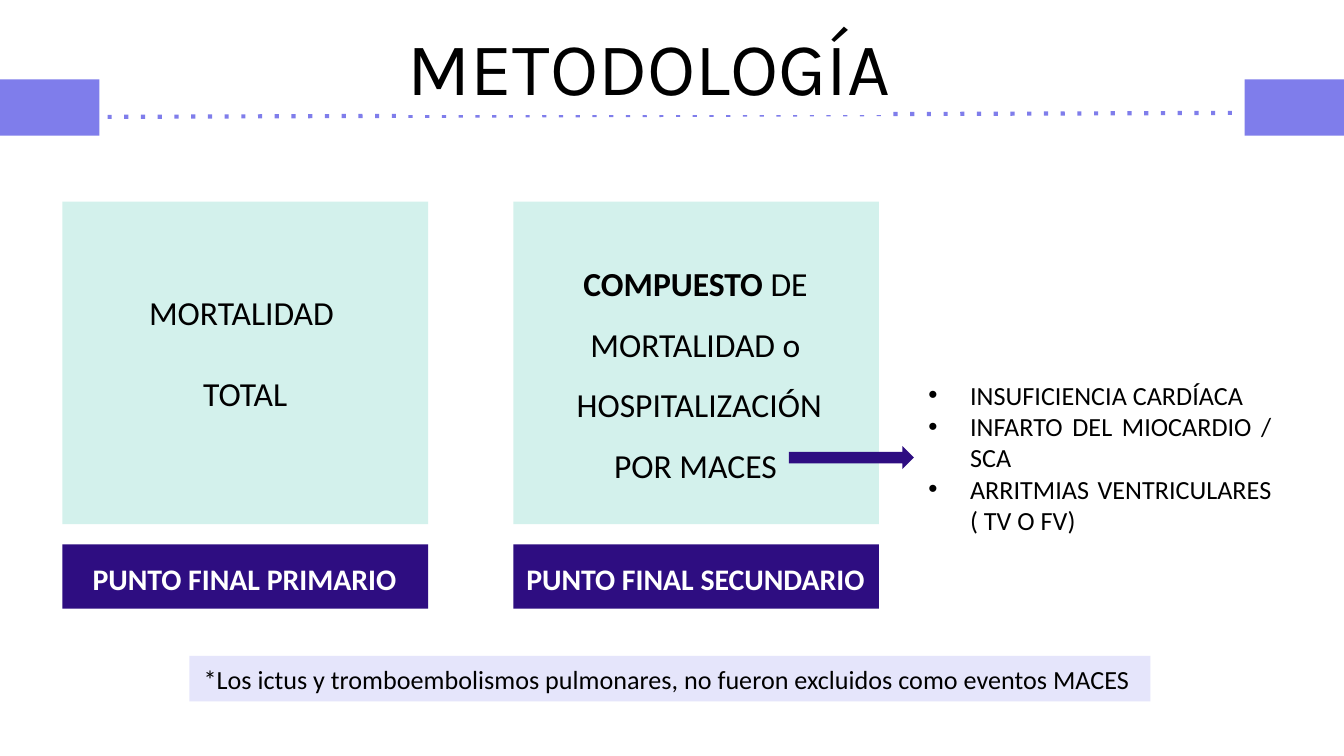
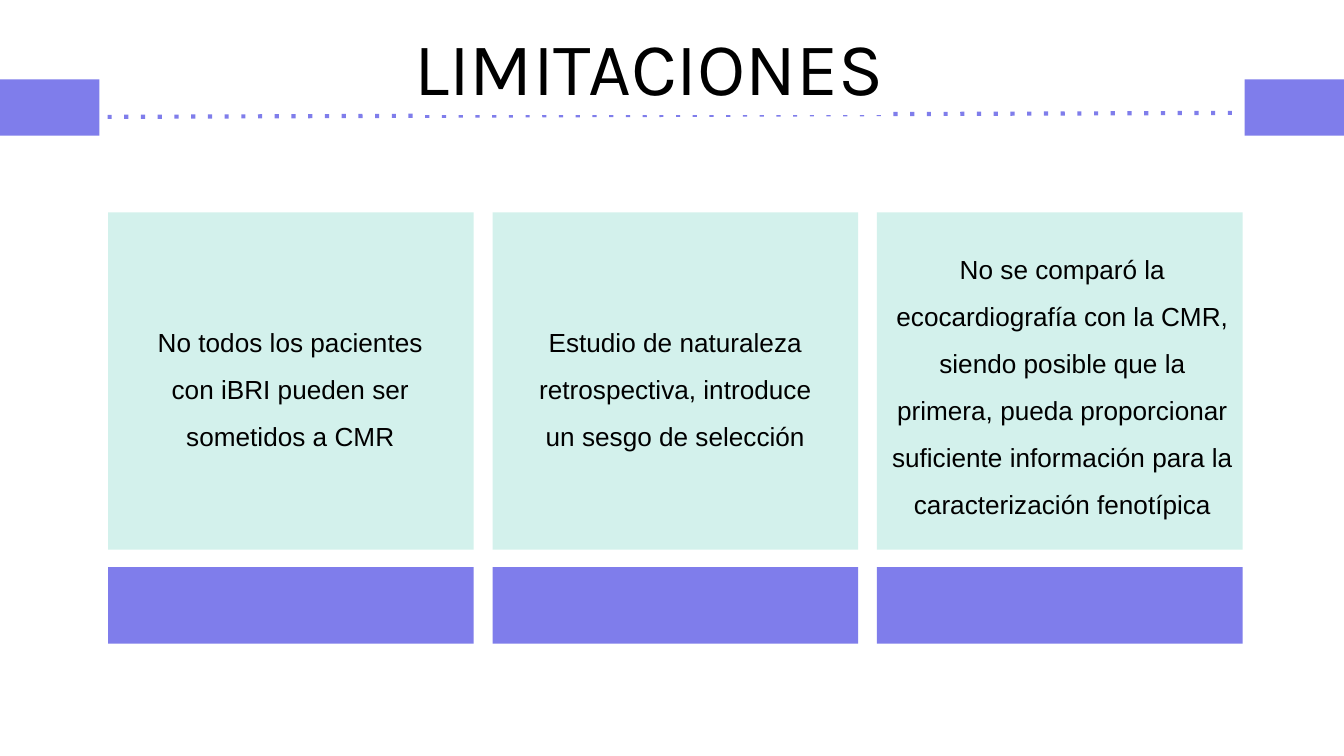
"""Builds the methodology and limitations slides of a cardiology study."""
import dataclasses
import typing

import lxml.etree
import pptx
import pptx.dml.color
import pptx.enum.shapes
import pptx.enum.text
import pptx.oxml.ns
import pptx.util

ALIGN = pptx.enum.text.PP_ALIGN
SHAPE = pptx.enum.shapes.MSO_SHAPE
COLUMNS, ROWS = 100, 56.25
WIDTH, HEIGHT = pptx.util.Inches(10), pptx.util.Inches(5.625)


@dataclasses.dataclass(frozen=True)
class Theme:
    """Colours, fonts and type sizes shared by the slides."""

    lavender: str = "7F7DEB"
    indigo: str = "2E0D81"
    mint: str = "89DBCC"
    mint_opacity: int = 37
    mist: str = "E5E5FB"
    black: str = "000000"
    white: str = "FFFFFF"
    title_font: str = "Karla"
    body_font: str = "Calibri"
    plain_font: str = "Arial"
    title_size: int = 40
    card_size: int = 18
    label_size: int = 16
    small_size: int = 14
    rule_width: float = 2.25


THEME = Theme()


class Box(typing.NamedTuple):
    """Place and size in grid columns and rows."""

    left: float
    top: float
    width: float
    height: float


class Run(typing.NamedTuple):
    """Words that share one weight."""

    text: str
    bold: bool = False


@dataclasses.dataclass(frozen=True)
class TextStyle:
    """Look of all paragraphs in one text."""

    size: int
    font: str = THEME.body_font
    color: str = THEME.black
    paragraph_format: dict = dataclasses.field(
        default_factory=lambda: {"alignment": ALIGN.CENTER})
    bulleted: bool = False
    highlight: str = ""


@dataclasses.dataclass(frozen=True)
class Label:
    """A free text box with its paragraphs of runs."""

    box: Box
    paragraphs: list[list[Run]]
    style: TextStyle
    wrap: bool = True


@dataclasses.dataclass(frozen=True)
class CardRow:
    """Equal cards side by side, each with a bar below."""

    count: int
    left: float
    pitch: float
    card_top: float
    card_height: float
    bar_top: float
    bar_height: float
    bar_color: str
    width: float = 27.2


AIRY = {"alignment": ALIGN.CENTER, "line_spacing": 1.5}
TITLE_STYLE = TextStyle(THEME.title_size, THEME.title_font, highlight=THEME.white)
BAR_STYLE = TextStyle(THEME.label_size, color=THEME.white)
CARD_STYLE = TextStyle(THEME.card_size, paragraph_format=AIRY)
SPLIT_STYLE = TextStyle(THEME.card_size, paragraph_format={
    "alignment": ALIGN.CENTER, "space_after": pptx.util.Pt(22)})
EVENT_STYLE = TextStyle(THEME.small_size, bulleted=True,
                        paragraph_format={"alignment": ALIGN.JUSTIFY})
NOTE_STYLE = TextStyle(THEME.small_size)
LIMIT_STYLE = TextStyle(THEME.small_size, THEME.plain_font, paragraph_format=AIRY)

TITLE_BOX = Box(28.6, 0.6, 39.4, 8.6)
SIDE_BANDS = [Box(left, 5.9, 7.5, 4.2) for left in (-0.1, 92.6)]
RULE_START, RULE_END = (8, 8.7), (92, 8.4)

ENDPOINT_CARDS = CardRow(2, 4.65, 33.55, 15, 24, 40.5, 4.8, THEME.indigo)
LIMIT_CARDS = CardRow(3, 8.05, 28.6, 15.8, 25.1, 42.2, 5.7, THEME.lavender)

ENDPOINT_LABELS = [
    Label(Box(5.7, 41.2, 25, 3.7), [[Run("PUNTO FINAL PRIMARIO", True)]],
          BAR_STYLE, wrap=False),
    Label(Box(37.9, 41.2, 27.7, 3.7), [[Run("PUNTO FINAL SECUNDARIO", True)]],
          BAR_STYLE, wrap=False),
    Label(Box(9.9, 21.2, 16.7, 10.1), [[Run("MORTALIDAD ")], [Run("TOTAL")]],
          SPLIT_STYLE, wrap=False),
    Label(Box(40.9, 17.6, 21.7, 19.2),
          [[Run("COMPUESTO", True), Run(" DE MORTALIDAD o")],
           [Run(" HOSPITALIZACIÓN POR MACES")]], CARD_STYLE),
    Label(Box(68.1, 27.7, 27.5, 12.8),
          [[Run("INSUFICIENCIA CARDÍACA")],
           [Run("INFARTO DEL MIOCARDIO / SCA")],
           [Run("ARRITMIAS VENTRICULARES ( TV O FV)")]], EVENT_STYLE),
]
EVENT_ARROW = Box(58.7, 33.2, 9.3, 1.7)
NOTE_BOX = Box(14.1, 48.8, 71.5, 3.4)
NOTE = [[Run("*Los ictus y tromboembolismos pulmonares, no fueron excluidos "
             "como eventos MACES ")]]

LIMIT_LABELS = [
    Label(Box(10.7, 22.6, 21.8, 11.6),
          [[Run("No todos los pacientes con iBRI pueden ser sometidos a CMR")]],
          LIMIT_STYLE),
    Label(Box(38.4, 22.6, 23.7, 11.6),
          [[Run("Estudio de naturaleza retrospectiva, introduce un sesgo de selección")]],
          LIMIT_STYLE),
    Label(Box(65.3, 17.2, 27.5, 22.2),
          [[Run("No se comparó la ecocardiografía con la CMR, siendo posible que la "
                "primera, pueda proporcionar")],
           [Run("suficiente información para la caracterización fenotípica")]],
          LIMIT_STYLE),
]


def across(columns: float) -> int:
    """Turn grid columns into a length."""
    return round(WIDTH * columns / COLUMNS)


def down(rows: float) -> int:
    """Turn grid rows into a length."""
    return round(HEIGHT * rows / ROWS)


def place(box: Box) -> tuple[int, int, int, int]:
    """Turn a grid box into slide lengths."""
    return across(box.left), down(box.top), across(box.width), down(box.height)


def rgb(color: str) -> pptx.dml.color.RGBColor:
    """Read a hexadecimal colour."""
    return pptx.dml.color.RGBColor.from_string(color)


def apply_format(target: typing.Any, values: dict) -> None:
    """Set each named attribute of the target."""
    for name, value in values.items():
        setattr(target, name, value)


def add_tag(parent: typing.Any, tag: str, **attributes: str) -> typing.Any:
    """Append a drawing element to its parent."""
    return lxml.etree.SubElement(parent, pptx.oxml.ns.qn(tag), attributes)


def add_bullet(paragraph: typing.Any) -> None:
    """Give the paragraph a hanging round bullet."""
    properties = paragraph._p.get_or_add_pPr()
    indent = pptx.util.Inches(0.31)
    properties.set("marL", str(indent))
    properties.set("indent", str(-indent))
    add_tag(add_tag(properties, "a:buClr"), "a:srgbClr", val=THEME.black)
    add_tag(properties, "a:buFont", typeface=THEME.plain_font)
    add_tag(properties, "a:buChar", char="•")


def write(frame: typing.Any, paragraphs: list[list[Run]], style: TextStyle) -> None:
    """Fill a text frame with styled paragraphs."""
    for index, runs in enumerate(paragraphs):
        paragraph = frame.add_paragraph() if index else frame.paragraphs[0]
        apply_format(paragraph, style.paragraph_format)
        if style.bulleted:
            add_bullet(paragraph)
        for words in runs:
            run = paragraph.add_run()
            run.text = words.text
            apply_format(run.font, {"size": pptx.util.Pt(style.size), "bold": words.bold})
            run.font.color.rgb = rgb(style.color)
            if style.highlight:
                add_tag(add_tag(run._r.get_or_add_rPr(), "a:highlight"),
                        "a:srgbClr", val=style.highlight)
            run.font.name = style.font


def add_block(slide: typing.Any, box: Box, color: str, opacity: int = 100,
              kind: typing.Any = SHAPE.RECTANGLE) -> typing.Any:
    """Draw a flat filled shape without outline."""
    shape = slide.shapes.add_shape(kind, *place(box))
    shape.shadow.inherit = False
    shape.fill.solid()
    shape.fill.fore_color.rgb = rgb(color)
    shape.line.fill.background()
    if opacity < 100:
        fill_color = shape._element.spPr.find(".//" + pptx.oxml.ns.qn("a:srgbClr"))
        add_tag(fill_color, "a:alpha", val=str(opacity * 1000))
    return shape


def add_label(slide: typing.Any, label: Label) -> typing.Any:
    """Draw a text box and return its frame."""
    frame = slide.shapes.add_textbox(*place(label.box)).text_frame
    frame.word_wrap = label.wrap
    write(frame, label.paragraphs, label.style)
    return frame


def add_rule(slide: typing.Any) -> None:
    """Draw the dotted line between the side bands."""
    (left, top), (right, bottom) = RULE_START, RULE_END
    connector = slide.shapes.add_connector(
        pptx.enum.shapes.MSO_CONNECTOR.STRAIGHT,
        across(left), down(top), across(right), down(bottom))
    connector.line.width = pptx.util.Pt(THEME.rule_width)
    connector.line.color.rgb = rgb(THEME.lavender)
    add_tag(connector.line._get_or_add_ln(), "a:prstDash", val="dot")
    add_tag(connector._element.spPr, "a:effectLst")


def add_titled_slide(presentation: typing.Any, title: str) -> typing.Any:
    """Add a blank slide with bands, rule and title."""
    slide = presentation.slides.add_slide(presentation.slide_layouts[6])
    for band in SIDE_BANDS:
        add_block(slide, band, THEME.lavender)
    add_rule(slide)
    frame = add_label(slide, Label(TITLE_BOX, [[Run(title)]], TITLE_STYLE))
    inset = pptx.util.Inches(0.1)
    apply_format(frame, {"vertical_anchor": pptx.enum.text.MSO_ANCHOR.MIDDLE,
                         "margin_top": inset, "margin_bottom": inset})
    return slide


def add_cards(slide: typing.Any, row: CardRow, labels: list[Label]) -> None:
    """Draw the cards, their bars and the texts over them."""
    lefts = [row.left + row.pitch * index for index in range(row.count)]
    for left in lefts:
        add_block(slide, Box(left, row.card_top, row.width, row.card_height),
                  THEME.mint, THEME.mint_opacity)
    for left in lefts:
        add_block(slide, Box(left, row.bar_top, row.width, row.bar_height), row.bar_color)
    for label in labels:
        add_label(slide, label)


def main() -> None:
    """Build and save the presentation."""
    presentation = pptx.Presentation()
    apply_format(presentation, {"slide_width": WIDTH, "slide_height": HEIGHT})

    methodology = add_titled_slide(presentation, "METODOLOGÍA")
    add_cards(methodology, ENDPOINT_CARDS, ENDPOINT_LABELS)
    add_block(methodology, EVENT_ARROW, THEME.indigo, kind=SHAPE.RIGHT_ARROW)
    note = add_block(methodology, NOTE_BOX, THEME.mist)
    write(note.text_frame, NOTE, NOTE_STYLE)

    limitations = add_titled_slide(presentation, "LIMITACIONES")
    add_cards(limitations, LIMIT_CARDS, LIMIT_LABELS)
    presentation.save("out.pptx")


if __name__ == "__main__":
    main()
